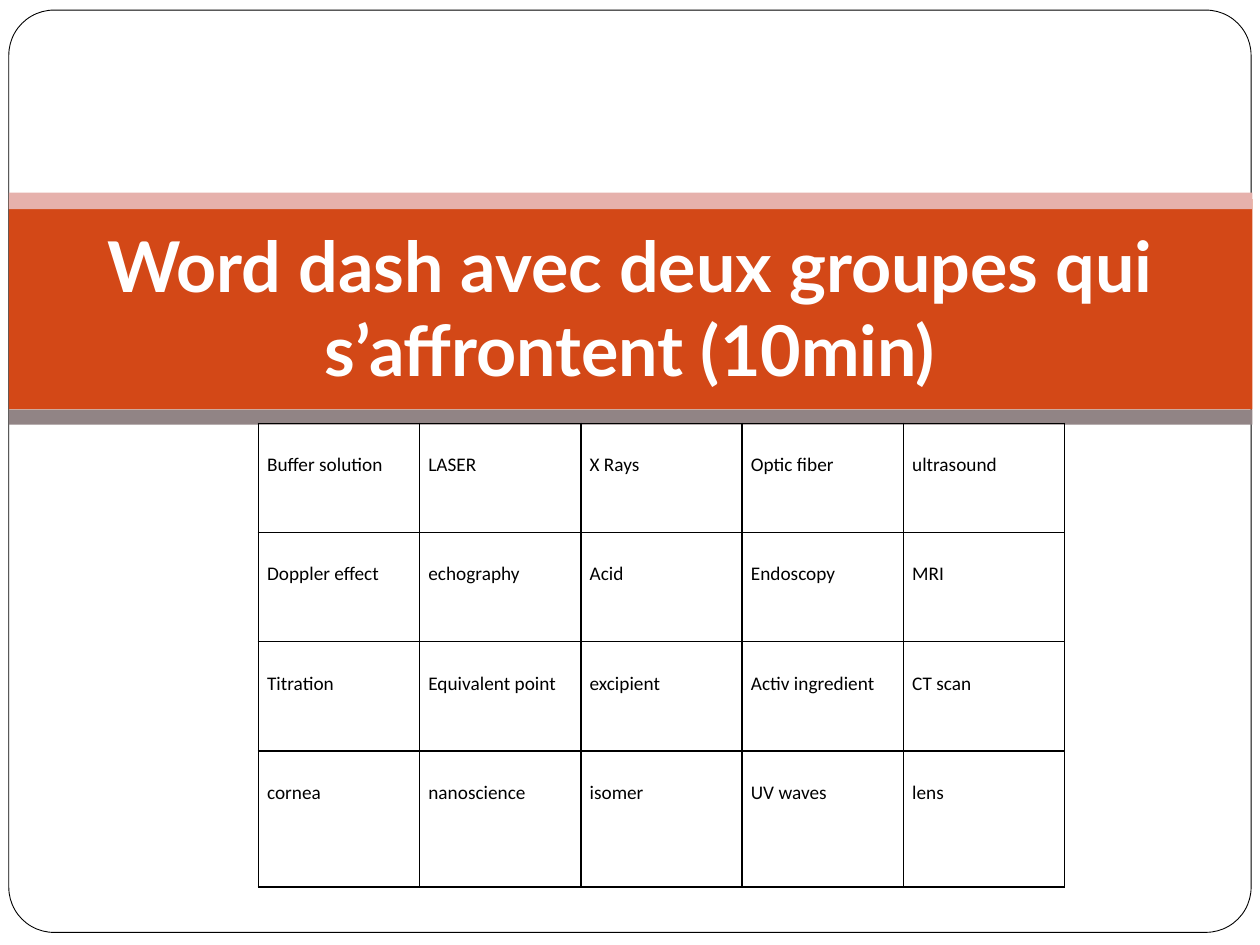
from lxml.etree import SubElement as Sub
from pptx import Presentation
from pptx.dml.color import RGBColor as Rgb
from pptx.enum.shapes import MSO_SHAPE as Kind
from pptx.enum.text import MSO_ANCHOR as Anchor, PP_ALIGN as Align
from pptx.oxml.ns import qn
from pptx.util import Inches, Pt

COLORS = {"ink": "000000", "paper": "FFFFFF", "band": "D34817",
          "top": "E6B1AC", "base": "918485"}
TITLE = "Word dash avec deux groupes qui s’affrontent (10min)"
WORDS = [
    ["Buffer solution", "LASER", "X Rays", "Optic fiber", "ultrasound"],
    ["Doppler effect", "echography", "Acid", "Endoscopy", "MRI"],
    ["Titration", "Equivalent point", "excipient", "Activ ingredient", "CT scan"],
    ["cornea", "nanoscience", "isomer", "UV waves", "lens"],
]


def write(frame, text, font="Calibri", size=11, color="ink", bold=False,
          align=Align.LEFT, space=1.0):
    """Put one formatted paragraph in a text frame."""
    frame.word_wrap = True
    para = frame.paragraphs[0]
    para.alignment = align
    para.line_spacing = space
    run = para.add_run()
    run.text = text
    run.font.name = font
    run.font.size = Pt(size)
    run.font.bold = bold
    run.font.color.rgb = Rgb.from_string(COLORS[color])


def block(slide, box, fill, kind=Kind.RECTANGLE, line=None):
    """Draw a filled shape, with a thin outline if a line colour is given."""
    shape = slide.shapes.add_shape(kind, *map(Inches, box))
    shape.shadow.inherit = False
    shape.fill.solid()
    shape.fill.fore_color.rgb = Rgb.from_string(COLORS[fill])
    if line:
        shape.line.color.rgb = Rgb.from_string(COLORS[line])
        shape.line.width = Pt(0.5)
    else:
        shape.line.fill.background()
    return shape


def border(cell, color="ink", width=1):
    """Line all four sides of a table cell."""
    props = cell._tc.get_or_add_tcPr()
    for side in ("lnL", "lnR", "lnT", "lnB"):
        edge = Sub(props, qn(f"a:{side}"), w=str(Pt(width)))
        fill = Sub(edge, qn("a:solidFill"))
        Sub(fill, qn("a:srgbClr"), val=COLORS[color])


def frame(slide, box):
    """Draw the rounded page frame."""
    shape = block(slide, box, "paper", Kind.ROUNDED_RECTANGLE, "ink")
    shape.adjustments[0] = 0.049


def banner(slide, box):
    """Draw the title band with its two edge strips and its text."""
    left, top, width, height = box
    block(slide, box, "band")
    block(slide, (left, top - 0.05, width, 0.13), "top")
    block(slide, (left, top + height, width, 0.12), "base")
    area = (0.5, top + 0.07, 9, height - 0.06)
    text = slide.shapes.add_textbox(*map(Inches, area)).text_frame
    text.vertical_anchor = Anchor.MIDDLE
    text.margin_bottom = Inches(0.1)
    write(text, TITLE, font="Lato", size=40, color="paper", bold=True,
          align=Align.CENTER)


def grid(slide, box, words, last=1.08):
    """Lay out the word table, with a taller last row."""
    rows, cols = len(words), len(words[0])
    table = slide.shapes.add_table(rows, cols, *map(Inches, box)).table
    table.first_row = table.horz_banding = False
    for col in table.columns:
        col.width = Inches(box[2] / cols)
    for row in table.rows:
        row.height = Inches((box[3] - last) / (rows - 1))
    table.rows[rows - 1].height = Inches(last)
    for cell, word in zip(table.iter_cells(), sum(words, [])):
        cell.margin_left = cell.margin_right = Inches(0.07)
        cell.margin_top, cell.margin_bottom = Inches(0.21), 0
        border(cell)
        cell.fill.background()
        write(cell.text_frame, word, space=1.15)


def main():
    """Build and save the slide."""
    deck = Presentation()
    deck.slide_width, deck.slide_height = Inches(10), Inches(7.5)
    slide = deck.slides.add_slide(deck.slide_layouts[6])
    frame(slide, (0.07, 0.08, 9.86, 7.32))
    banner(slide, (0.07, 1.58, 9.87, 1.67))
    grid(slide, (2.05, 3.36, 6.4, 3.68), WORDS)
    deck.save("out.pptx")


if __name__ == "__main__":
    main()
